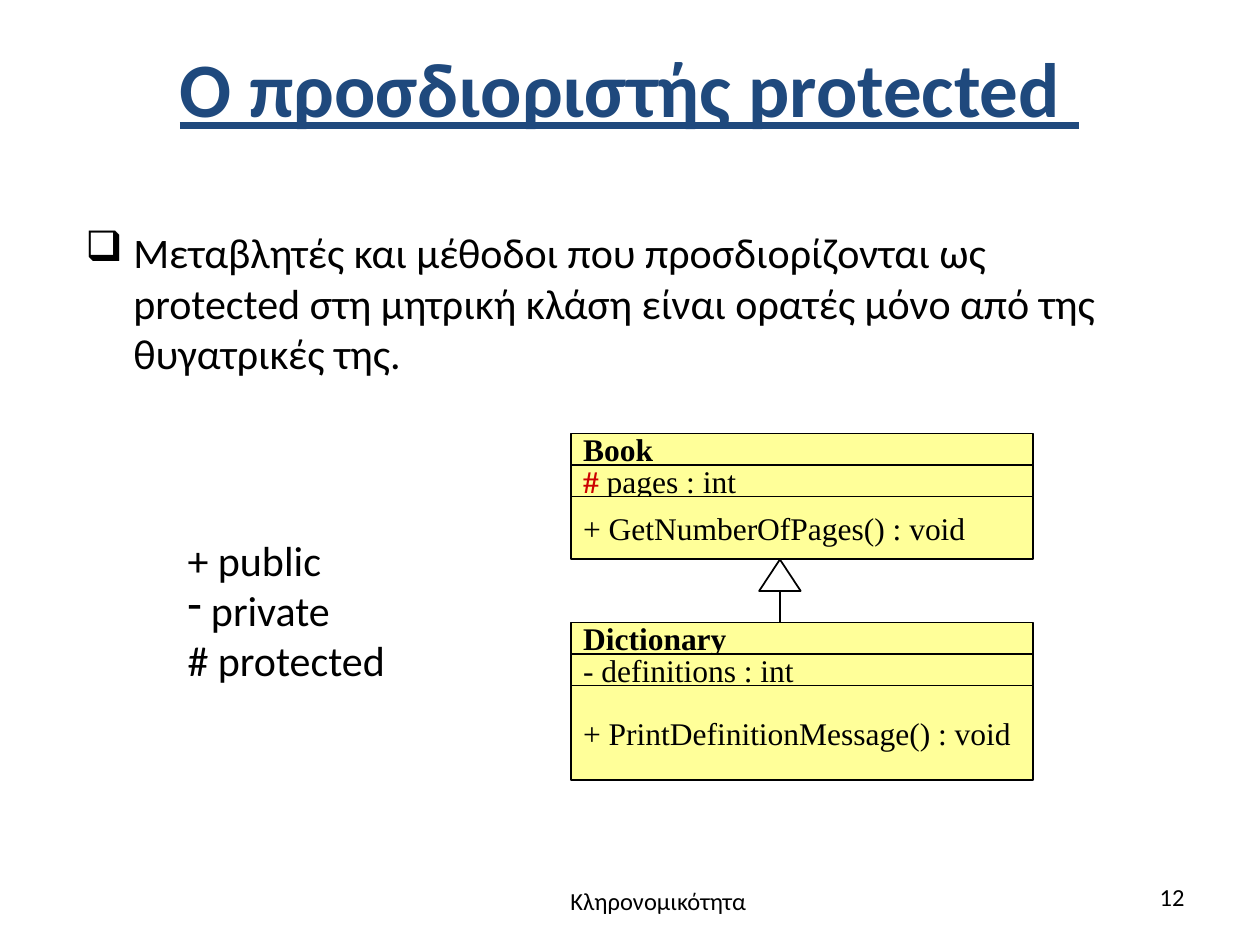
"""Build a slide on the protected access modifier with a small UML class diagram."""
from dataclasses import dataclass

from lxml.etree import SubElement
from pptx import Presentation
from pptx.dml.color import RGBColor
from pptx.enum.shapes import MSO_CONNECTOR, MSO_SHAPE
from pptx.enum.text import MSO_ANCHOR, PP_ALIGN
from pptx.oxml.ns import qn
from pptx.util import Inches, Pt


@dataclass(frozen=True)
class Theme:
    title: str = "1F497D"
    ink: str = "000000"
    accent: str = "CC0000"
    box: str = "FFFF99"
    paper: str = "FFFFFF"
    sans: str = "Calibri"
    serif: str = "Times New Roman"
    line: float = 1


T = Theme()
STYLES = {
    "title": dict(name=T.sans, size=44, color=T.title, bold=True, underline=True),
    "body": dict(name=T.sans, size=24, color=T.ink),
    "footer": dict(name=T.sans, size=14, color=T.ink),
    "member": dict(name=T.serif, size=18, color=T.ink, bold=False),
    "class": dict(name=T.serif, size=18, color=T.ink, bold=True),
    "marker": dict(name=T.serif, size=18, color=T.accent, bold=True),
}

TITLE = "Ο προσδιοριστής protected "
BODY = ("Μεταβλητές και μέθοδοι που προσδιορίζονται ως protected "
        "στη μητρική κλάση είναι ορατές μόνο από της θυγατρικές της.")
LEGEND = [("+ public", None), (" private", "-"), ("# protected", None)]
FOOTERS = [
    ("Κληρονομικότητα", (3.48, 6.98, 3.49, 0.55), PP_ALIGN.CENTER),
    ("12", (7.17, 6.95, 2.33, 0.4), PP_ALIGN.RIGHT),
]
ROW = 0.25
CLASS_LEFT, CLASS_TOP, CLASS_WIDTH = 4.53, 3.44, 3.67
ARROW_X, ARROW_WIDTH = 6.19, 0.33
CLASSES = [
    [(1, [("Book", "class")]),
     (1, [("#", "marker"), (" pages : int", "member")]),
     (2, [("+ GetNumberOfPages() : void", "member")])],
    [(1, [("Dictionary", "class")]),
     (1, [("- definitions : int", "member")]),
     (3, [("+ PrintDefinitionMessage() : void", "member")])],
]


def inches(*values):
    return [Inches(v) for v in values]


def add_run(p, text, style):
    r = p.add_run()
    r.text = text
    for key, value in STYLES[style].items():
        if key == "color":
            r.font.color.rgb = RGBColor.from_string(value)
        else:
            setattr(r.font, key, Pt(value) if key == "size" else value)


def add_bullet(p, char, indent=0):
    pPr = p._p.get_or_add_pPr()
    pPr.set("marL", str(Inches(indent)))
    pPr.set("indent", str(-Inches(indent)))
    SubElement(pPr, qn("a:buChar"), char=char)


def add_text(shapes, box, wrap=True):
    tf = shapes.add_textbox(*inches(*box)).text_frame
    tf.word_wrap = wrap
    return tf


def add_outlined(shapes, kind, box, fill):
    sp = shapes.add_shape(kind, *inches(*box))
    sp.shadow.inherit = False
    sp.fill.solid()
    sp.fill.fore_color.rgb = RGBColor.from_string(fill)
    sp.line.color.rgb = RGBColor.from_string(T.ink)
    sp.line.width = Pt(T.line)
    return sp


def add_class(shapes, top, rows):
    for units, runs in rows:
        height = units * ROW
        sp = add_outlined(shapes, MSO_SHAPE.RECTANGLE,
                          (CLASS_LEFT, top, CLASS_WIDTH, height), T.box)
        tf = sp.text_frame
        tf.word_wrap = False
        tf.vertical_anchor = MSO_ANCHOR.MIDDLE
        p = tf.paragraphs[0]
        p.alignment = PP_ALIGN.LEFT
        for text, style in runs:
            add_run(p, text, style)
        top += height
    return top


def add_inheritance(shapes, child_y, parent_y):
    line = shapes.add_connector(MSO_CONNECTOR.STRAIGHT,
                                *inches(ARROW_X, child_y, ARROW_X, parent_y))
    line.line.color.rgb = RGBColor.from_string(T.ink)
    line.line.width = Pt(T.line)
    SubElement(line.line._get_or_add_ln(), qn("a:tailEnd"), type="triangle")
    SubElement(line._element.spPr, qn("a:effectLst"))
    add_outlined(shapes, MSO_SHAPE.ISOSCELES_TRIANGLE,
                 (ARROW_X - ARROW_WIDTH / 2, parent_y, ARROW_WIDTH, ROW), T.paper)


def main():
    prs = Presentation()
    prs.slide_width, prs.slide_height = inches(10, 7.5)
    s = prs.slides.add_slide(prs.slide_layouts[5])

    title = s.shapes.title
    title.left, title.top, title.width, title.height = inches(0.35, -0.03, 9.29, 1.42)
    tf = title.text_frame
    tf.vertical_anchor = MSO_ANCHOR.MIDDLE
    for side, value in dict(left=0, top=0.02, right=0, bottom=0).items():
        setattr(tf, f"margin_{side}", Inches(value))
    tf.paragraphs[0].alignment = PP_ALIGN.CENTER
    add_run(tf.paragraphs[0], TITLE, "title")

    p = add_text(s.shapes, (0.58, 1.75, 8.5, 1.76)).paragraphs[0]
    add_bullet(p, "❑", 0.38)
    add_run(p, BODY, "body")

    tf = add_text(s.shapes, (1.39, 4.19, 1.86, 1.31), wrap=False)
    for i, (text, bullet) in enumerate(LEGEND):
        p = tf.add_paragraph() if i else tf.paragraphs[0]
        if bullet:
            add_bullet(p, bullet)
        add_run(p, text, "body")

    diagram = s.shapes.add_group_shape().shapes
    parent, child = CLASSES
    parent_bottom = add_class(diagram, CLASS_TOP, parent)
    child_top = parent_bottom + 2 * ROW
    add_class(diagram, child_top, child)
    add_inheritance(diagram, child_top, parent_bottom)

    for text, box, align in FOOTERS:
        p = add_text(s.shapes, box).paragraphs[0]
        p.alignment = align
        add_run(p, text, "footer")

    prs.save("out.pptx")


if __name__ == "__main__":
    main()
